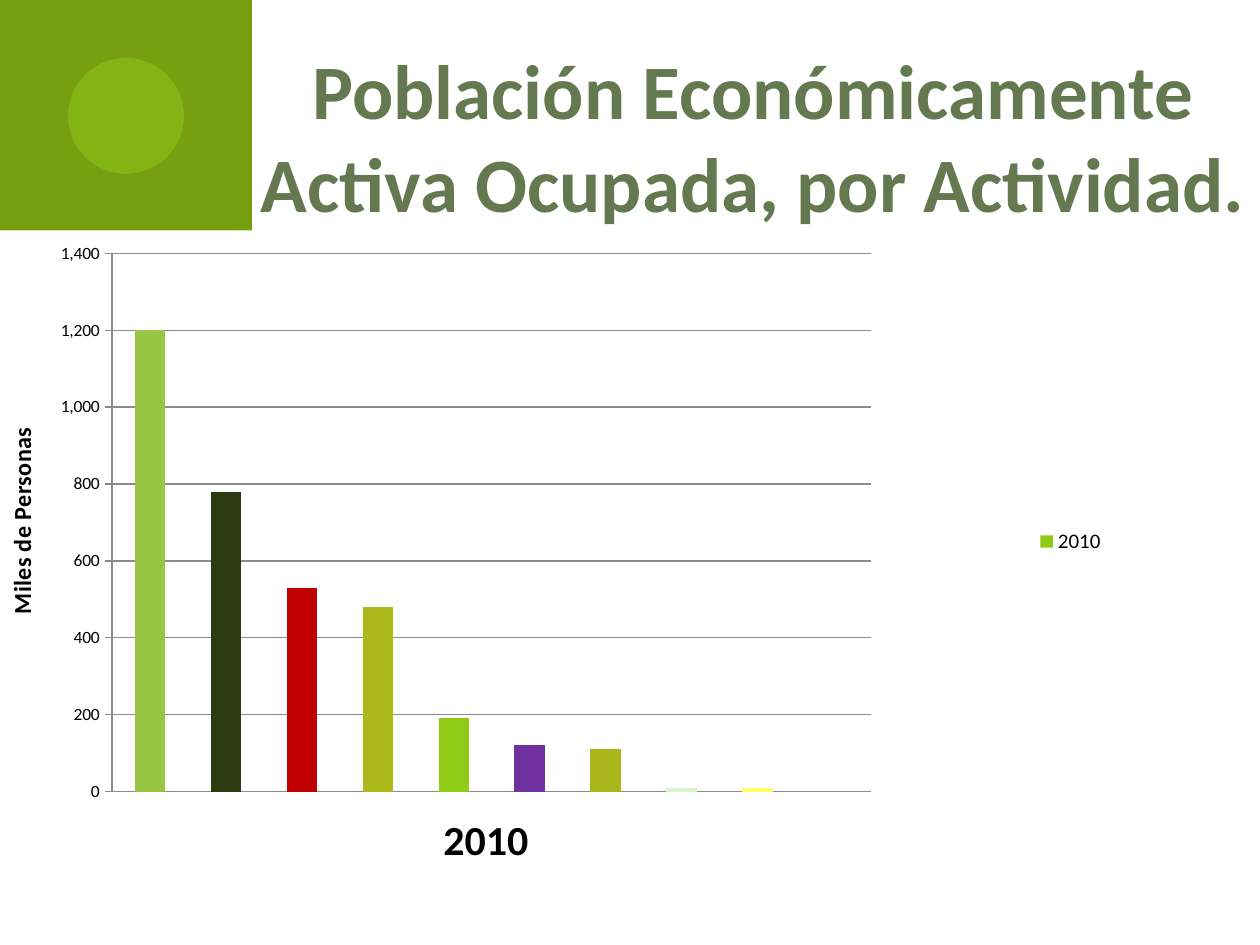
"""Slide with a column chart of the employed population by activity."""
from lxml.etree import SubElement
from pptx import Presentation
from pptx.chart.data import CategoryChartData
from pptx.dml.color import RGBColor
from pptx.enum.chart import XL_CHART_TYPE as ChartType, XL_LEGEND_POSITION as LegendPosition
from pptx.enum.chart import XL_TICK_MARK as TickMark
from pptx.enum.shapes import MSO_SHAPE as Shape
from pptx.enum.text import MSO_ANCHOR as Anchor, MSO_AUTO_SIZE as AutoSize, PP_ALIGN as Align
from pptx.oxml.ns import qn
from pptx.util import Inches, Pt

GREEN = RGBColor(0x76, 0x9F, 0x11)
LIME = RGBColor(0x8F, 0xCB, 0x17)
SAGE = RGBColor(0x64, 0x79, 0x4F)
GRAY = RGBColor(0x8B, 0x8B, 0x8B)
BLACK = RGBColor(0, 0, 0)
BAR_COLORS = [
    RGBColor(0x97, 0xC6, 0x44), RGBColor(0x2C, 0x3B, 0x12), RGBColor(0xC0, 0x00, 0x00),
    RGBColor(0xAB, 0xB9, 0x1A), LIME, RGBColor(0x70, 0x30, 0xA0),
    RGBColor(0xA8, 0xB6, 0x1B), RGBColor(0xD9, 0xF4, 0xCB), RGBColor(0xFF, 0xFF, 0x66),
]
PEOPLE = [1200, 780, 530, 480, 190, 120, 110, 10, 10, None]


def place(element, index, **shares):
    """Give a chart part a manual layout in shares of the chart's size."""
    for old in element.findall(qn("c:layout")):
        element.remove(old)
    layout = SubElement(element, qn("c:layout"))
    element.insert(index, layout)
    manual = SubElement(layout, qn("c:manualLayout"))
    if index == 0:
        SubElement(manual, qn("c:layoutTarget")).set("val", "inner")
    for axis in "xy":
        SubElement(manual, qn(f"c:{axis}Mode")).set("val", "edge")
    for key, share in shares.items():
        SubElement(manual, qn(f"c:{key}")).set("val", str(share))


deck = Presentation()
deck.slide_width, deck.slide_height = Inches(10), Inches(7.5)
slide = deck.slides.add_slide(deck.slide_layouts[5])

for kind, box, color in (
    (Shape.RECTANGLE, (0, 0, 2, 1.83), GREEN),
    (Shape.OVAL, (0.54, 0.46, 0.92, 0.92), LIME),
):
    emblem = slide.shapes.add_shape(kind, *map(Inches, box))
    emblem.shadow.inherit = False
    emblem.line.fill.background()
    emblem.fill.solid()
    emblem.fill.fore_color.rgb = color
tint = emblem.fill._xPr.find(".//" + qn("a:srgbClr"))
SubElement(tint, qn("a:alpha")).set("val", "50000")

data = CategoryChartData(number_format="#,##0")
data.categories = [str(number + 1) for number in range(len(PEOPLE))]
data.add_series("2010", PEOPLE)
chart = slide.shapes.add_chart(
    ChartType.COLUMN_CLUSTERED, *map(Inches, (0, 1.86, 9.88, 5.12)), data
).chart
chart.font.name, chart.font.size = "Calibri", Pt(10)
chart.font.color.rgb = BLACK

chart.has_title = True
chart.chart_title.text_frame.text = "2010"
year_font = chart.chart_title.text_frame.paragraphs[0].runs[0].font

plot = chart.plots[0]
plot.vary_by_categories = False
plot.gap_width = 150
columns = plot.series[0]
columns.format.fill.solid()
columns.format.fill.fore_color.rgb = LIME
for index, color in enumerate(BAR_COLORS):
    fill = columns.points[index].format.fill
    fill.solid()
    fill.fore_color.rgb = color

chart.category_axis.visible = False
people_axis = chart.value_axis
people_axis.minimum_scale, people_axis.maximum_scale = 0, 1400
people_axis.major_unit = 200
people_axis.major_tick_mark = TickMark.CROSS
people_axis.tick_labels.number_format = "#,##0"
people_axis.tick_labels.number_format_is_linked = False
people_axis.has_major_gridlines = True
for line in (people_axis.format.line, people_axis.major_gridlines.format.line):
    line.color.rgb = GRAY
    line.width = Pt(0.75)
people_axis.axis_title.text_frame.text = "Miles de Personas"
people_font = people_axis.axis_title.text_frame.paragraphs[0].runs[0].font

for font, size in ((year_font, 24), (people_font, 14)):
    font.name, font.size, font.bold = "Calibri", Pt(size), True
    font.color.rgb = BLACK

chart.has_legend = True
chart.legend.position = LegendPosition.RIGHT
chart.legend.include_in_layout = False
chart.legend.font.name, chart.legend.font.size = "Calibri", Pt(12)
chart.legend.font.color.rgb = BLACK

place(chart._chartSpace.find(".//" + qn("c:plotArea")), 0, x=0.09, y=0.03, w=0.61, h=0.85)
place(chart.chart_title._element, 1, x=0.35, y=0.9)
place(chart.legend._element, 1, x=0.81, y=0.46, w=0.1, h=0.05)

heading = slide.shapes.title
heading.left, heading.top, heading.width, heading.height = map(Inches, (1.93, 0.29, 8.1, 1.58))
frame = heading.text_frame
frame.text = "Población Económicamente\nActiva Ocupada, por Actividad."
frame.word_wrap = False
frame.auto_size = AutoSize.SHAPE_TO_FIT_TEXT
frame.vertical_anchor = Anchor.TOP
for paragraph in frame.paragraphs:
    paragraph.alignment = Align.CENTER
    paragraph.space_before = Pt(0)
    font = paragraph.runs[0].font
    font.name, font.size, font.bold = "Calibri", Pt(44), True
    font.color.rgb = SAGE

deck.save("out.pptx")
